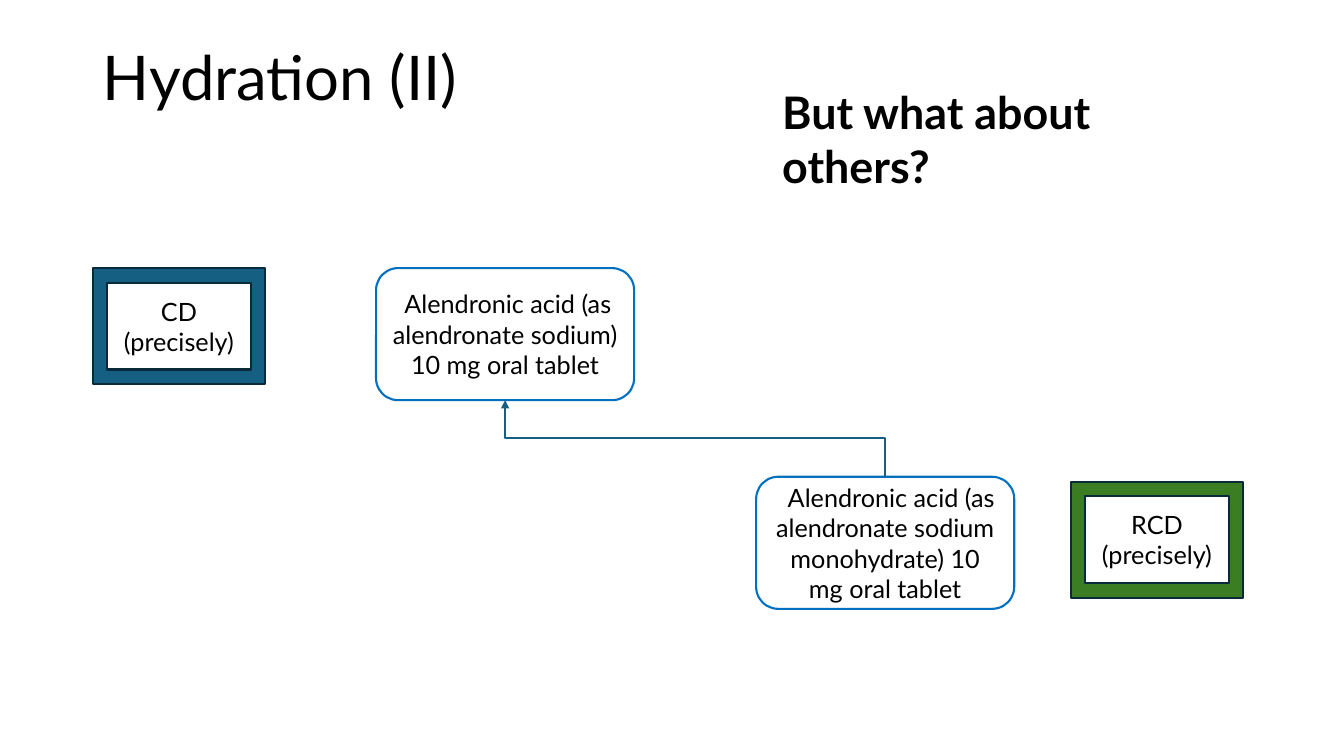
import dataclasses

import pptx
import pptx.dml.color
import pptx.enum.shapes
import pptx.enum.text
import pptx.oxml
import pptx.oxml.ns
import pptx.presentation
import pptx.shapes.autoshape
import pptx.slide
import pptx.text.text
import pptx.util

RGBColor = pptx.dml.color.RGBColor
ShapeType = pptx.enum.shapes.MSO_SHAPE
Alignment = pptx.enum.text.PP_ALIGN
Anchor = pptx.enum.text.MSO_ANCHOR
AutoSize = pptx.enum.text.MSO_AUTO_SIZE

BLACK = RGBColor(0x00, 0x00, 0x00)
WHITE = RGBColor(0xFF, 0xFF, 0xFF)
BLUE = RGBColor(0x00, 0x70, 0xC0)
TEAL = RGBColor(0x15, 0x60, 0x82)
GREEN = RGBColor(0x3B, 0x7D, 0x23)
NAVY = RGBColor(0x09, 0x2A, 0x39)

SLIDE_WIDTH = pptx.util.Inches(13.33)
SLIDE_HEIGHT = pptx.util.Inches(7.5)
COLUMN = SLIDE_WIDTH / 100
ROW = SLIDE_HEIGHT / 100
LINE_WIDTH = pptx.util.Pt(1.5)
FONT = "Lato"


@dataclasses.dataclass(frozen=True)
class Area:
    column: float
    row: float
    columns: float
    rows: float

    def lengths(self) -> tuple[int, int, int, int]:
        return (
            round(self.column * COLUMN),
            round(self.row * ROW),
            round(self.columns * COLUMN),
            round(self.rows * ROW),
        )


@dataclasses.dataclass(frozen=True)
class Box:
    text: str
    kind: ShapeType
    area: Area
    fill: RGBColor
    line: RGBColor


TITLE_AREA = Area(6.9, 5.33, 86.27, 10.67)
QUESTION_AREA = Area(57.46, 10.53, 24.9, 15.73)

MONOHYDRATE = Box(
    "  Alendronic acid (as alendronate sodium monohydrate) 10 mg oral tablet",
    ShapeType.ROUNDED_RECTANGLE, Area(56.26, 63.07, 19.2, 17.47), WHITE, BLUE,
)
SODIUM = Box(
    " Alendronic acid (as alendronate sodium) 10 mg oral tablet",
    ShapeType.ROUNDED_RECTANGLE, Area(27.98, 35.47, 19.2, 17.47), WHITE, BLUE,
)
CLINICAL_DRUG = Box(
    "CD (precisely)", ShapeType.FRAME, Area(6.9, 35.47, 12.83, 15.33), TEAL, NAVY,
)
ROOT_CLINICAL_DRUG = Box(
    "RCD (precisely)", ShapeType.FRAME, Area(79.67, 63.73, 12.83, 15.33), GREEN, NAVY,
)
BOXES = (MONOHYDRATE, SODIUM, CLINICAL_DRUG, ROOT_CLINICAL_DRUG)


def add_run(
    paragraph: pptx.text.text._Paragraph, text: str, size: float, bold: bool = False
) -> None:
    run = paragraph.add_run()
    run.text = text
    run.font.name = FONT
    run.font.size = pptx.util.Pt(size)
    run.font.bold = bold
    run.font.color.rgb = BLACK


def set_title(slide: pptx.slide.Slide) -> None:
    title = slide.shapes.title
    title.left, title.top, title.width, title.height = TITLE_AREA.lengths()
    frame = title.text_frame
    frame.auto_size = AutoSize.NONE
    frame.vertical_anchor = Anchor.MIDDLE
    paragraph = frame.paragraphs[0]
    paragraph.alignment = Alignment.LEFT
    paragraph.line_spacing = 0.9
    add_run(paragraph, "Hydration (II)", 44)


def add_question(slide: pptx.slide.Slide) -> None:
    frame = slide.shapes.add_textbox(*QUESTION_AREA.lengths()).text_frame
    frame.word_wrap = True
    frame.auto_size = AutoSize.SHAPE_TO_FIT_TEXT
    add_run(frame.paragraphs[0], "But what about others?", 32, bold=True)


def add_box(slide: pptx.slide.Slide, box: Box) -> pptx.shapes.autoshape.Shape:
    shape = slide.shapes.add_shape(box.kind, *box.area.lengths())
    shape.shadow.inherit = False
    shape.fill.solid()
    shape.fill.fore_color.rgb = box.fill
    shape.line.color.rgb = box.line
    shape.line.width = LINE_WIDTH
    frame = shape.text_frame
    frame.word_wrap = True
    frame.vertical_anchor = Anchor.MIDDLE
    paragraph = frame.paragraphs[0]
    paragraph.alignment = Alignment.CENTER
    add_run(paragraph, box.text, 18)
    return shape


def add_upward_arrow(
    slide: pptx.slide.Slide,
    lower: pptx.shapes.autoshape.Shape,
    upper: pptx.shapes.autoshape.Shape,
) -> None:
    start_x = lower.left + lower.width // 2
    end_x = upper.left + upper.width // 2
    start_y, end_y = lower.top, upper.top + upper.height
    center_x, center_y = (start_x + end_x) // 2, (start_y + end_y) // 2
    half_span, half_rise = (start_x - end_x) // 2, (start_y - end_y) // 2
    connector = slide.shapes.add_connector(
        pptx.enum.shapes.MSO_CONNECTOR.ELBOW,
        center_x - half_rise, center_y + half_span,
        center_x + half_rise, center_y - half_span,
    )
    connector.line.color.rgb = TEAL
    connector.line.width = LINE_WIDTH
    properties = connector._element.spPr
    properties.find(pptx.oxml.ns.qn("a:xfrm")).set("rot", str(270 * 60000))
    namespace = pptx.oxml.ns.nsdecls("a")
    line = properties.find(pptx.oxml.ns.qn("a:ln"))
    line.append(pptx.oxml.parse_xml(f'<a:tailEnd {namespace} type="triangle"/>'))
    properties.append(pptx.oxml.parse_xml(f"<a:effectLst {namespace}/>"))


def main() -> None:
    presentation = pptx.Presentation()
    presentation.slide_width = SLIDE_WIDTH
    presentation.slide_height = SLIDE_HEIGHT
    title_only = presentation.slide_layouts.get_by_name("Title Only")
    slide = presentation.slides.add_slide(title_only)
    set_title(slide)
    shapes = {box: add_box(slide, box) for box in BOXES}
    add_upward_arrow(slide, lower=shapes[MONOHYDRATE], upper=shapes[SODIUM])
    add_question(slide)
    presentation.save("out.pptx")


if __name__ == "__main__":
    main()
